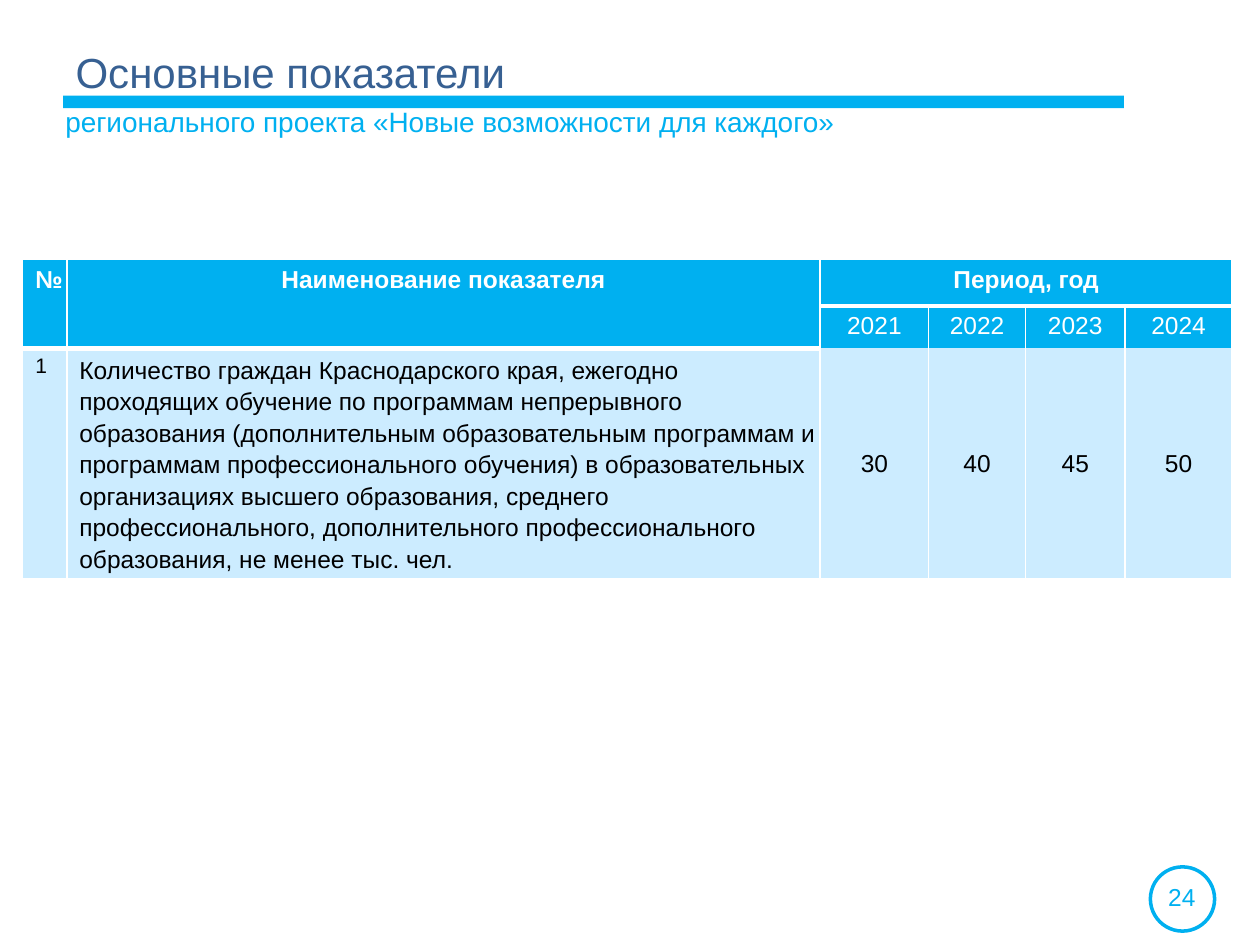
from lxml import etree
from pptx import Presentation
from pptx.dml.color import RGBColor
from pptx.enum.shapes import MSO_SHAPE
from pptx.enum.text import MSO_ANCHOR, PP_ALIGN
from pptx.oxml.ns import qn
from pptx.util import Inches, Pt

RECT, OVAL = MSO_SHAPE.RECTANGLE, MSO_SHAPE.OVAL
LEFT, MID = PP_ALIGN.LEFT, PP_ALIGN.CENTER
TOP, CENTER = MSO_ANCHOR.TOP, MSO_ANCHOR.MIDDLE
BLUE, NAVY, PALE = "00B0F0", "376092", "CCECFF"
WHITE, BLACK = "FFFFFF", "000000"


def color(code):
    return RGBColor.from_string(code)


class Deck:
    font = "Arial"

    def __init__(self, wide, high):
        self.prs = Presentation()
        self.prs.slide_width, self.prs.slide_height = Inches(wide), Inches(high)
        self.slide = self.prs.slides.add_slide(self.prs.slide_layouts[5])

    def label(self, frame, words, size, tint, bold=False, align=LEFT):
        par = frame.paragraphs[0]
        par.alignment = align
        run = par.add_run()
        run.text = words
        look = {"name": self.font, "size": Pt(size), "bold": bold}
        for key, value in look.items():
            setattr(run.font, key, value)
        run.font.color.rgb = color(tint)
        return par

    def title(self, words, box, size, tint):
        shape = self.slide.shapes.title
        for key, value in zip(("left", "top", "width", "height"), box):
            setattr(shape, key, Inches(value))
        frame = shape.text_frame
        frame.vertical_anchor = TOP
        frame.margin_top = Inches(0.07)
        self.label(frame, words, size, tint)

    def text(self, words, box, size, tint, align=LEFT):
        frame = self.slide.shapes.add_textbox(*map(Inches, box)).text_frame
        frame.word_wrap = True
        self.label(frame, words, size, tint, align=align)

    def shape(self, kind, box, fill=None, line=None):
        shape = self.slide.shapes.add_shape(kind, *map(Inches, box))
        shape.shadow.inherit = False
        if fill:
            shape.fill.solid()
            shape.fill.fore_color.rgb = color(fill)
        else:
            shape.fill.background()
        if line:
            shape.line.color.rgb = color(line)
            shape.line.width = Pt(2)
        else:
            shape.line.fill.background()

    def table(self, box, cols, rows):
        grid = self.slide.shapes.add_table(len(rows), len(cols), *map(Inches, box)).table
        for col, width in zip(grid.columns, cols):
            col.width = Inches(width)
        for row, height in zip(grid.rows, rows):
            row.height = Inches(height)
        return grid

    def cell(self, cell, fill, above, below):
        cell.fill.solid()
        cell.fill.fore_color.rgb = color(fill)
        props = cell._tc.get_or_add_tcPr()
        edges = {"lnL": 1, "lnR": 1, "lnT": above, "lnB": below}
        for spot, (tag, width) in enumerate(edges.items()):
            edge = etree.Element(qn("a:" + tag), w=str(Pt(width)))
            if width:
                solid = etree.SubElement(edge, qn("a:solidFill"))
                etree.SubElement(solid, qn("a:srgbClr"), val=WHITE)
            else:
                etree.SubElement(edge, qn("a:noFill"))
            props.insert(spot, edge)


def main():
    deck = Deck(10, 7.5)
    deck.shape(RECT, (0.5, 0.76, 8.42, 0.1), fill=BLUE)
    deck.shape(OVAL, (9.13, 6.88, 0.51, 0.51), line=BLUE)
    deck.text("24", (9.09, 6.95, 0.58, 0.34), 14, BLUE, MID)
    deck.title("Основные показатели", (0.5, 0.3, 7.79, 0.64), 24, NAVY)
    deck.text("регионального проекта «Новые возможности для каждого»",
              (0.42, 0.78, 8.56, 0.49), 16, BLUE)

    grid = deck.table((0.18, 2.06, 9.6, 2.53),
                      (0.35, 5.98, 0.86, 0.77, 0.79, 0.85), (0.37, 0.33, 1.83))
    for row in range(3):
        for col in range(6):
            rule = 3 if col < 2 else 0
            above, below = ((1, 3), (3, rule), (rule, 1))[row]
            deck.cell(grid.cell(row, col), PALE if row == 2 else BLUE, above, below)
    for first, last in (((0, 0), (1, 0)), ((0, 1), (1, 1)), ((0, 2), (0, 5))):
        grid.cell(*first).merge(grid.cell(*last))

    for col, words in enumerate(("№", "Наименование показателя", "Период, год")):
        deck.label(grid.cell(0, col).text_frame, words, 14, WHITE, True, MID)
    years = {"2021": "30", "2022": "40", "2023": "45", "2024": "50"}
    for col, (year, count) in enumerate(years.items(), 2):
        deck.label(grid.cell(1, col).text_frame, year, 14, WHITE, align=MID)
        cell = grid.cell(2, col)
        cell.vertical_anchor = CENTER
        deck.label(cell.text_frame, count, 14, BLACK, align=MID)

    deck.label(grid.cell(2, 0).text_frame, "1", 12, BLACK)
    cell = grid.cell(2, 1)
    style = {"vertical_anchor": CENTER, "margin_left": Inches(0.02), "margin_top": 0,
             "margin_right": Inches(0.02), "margin_bottom": 0}
    for key, value in style.items():
        setattr(cell, key, value)
    goal = ("Количество граждан Краснодарского края, ежегодно проходящих обучение "
            "по программам непрерывного образования (дополнительным образовательным "
            "программам и программам профессионального обучения) в образовательных "
            "организациях высшего образования, среднего профессионального, "
            "дополнительного профессионального образования, не менее тыс. чел.")
    par = deck.label(cell.text_frame, goal, 14, BLACK)
    par.line_spacing = Pt(18)
    par._p.get_or_add_pPr().set("marL", str(Inches(0.08)))
    deck.prs.save("out.pptx")


if __name__ == "__main__":
    main()
